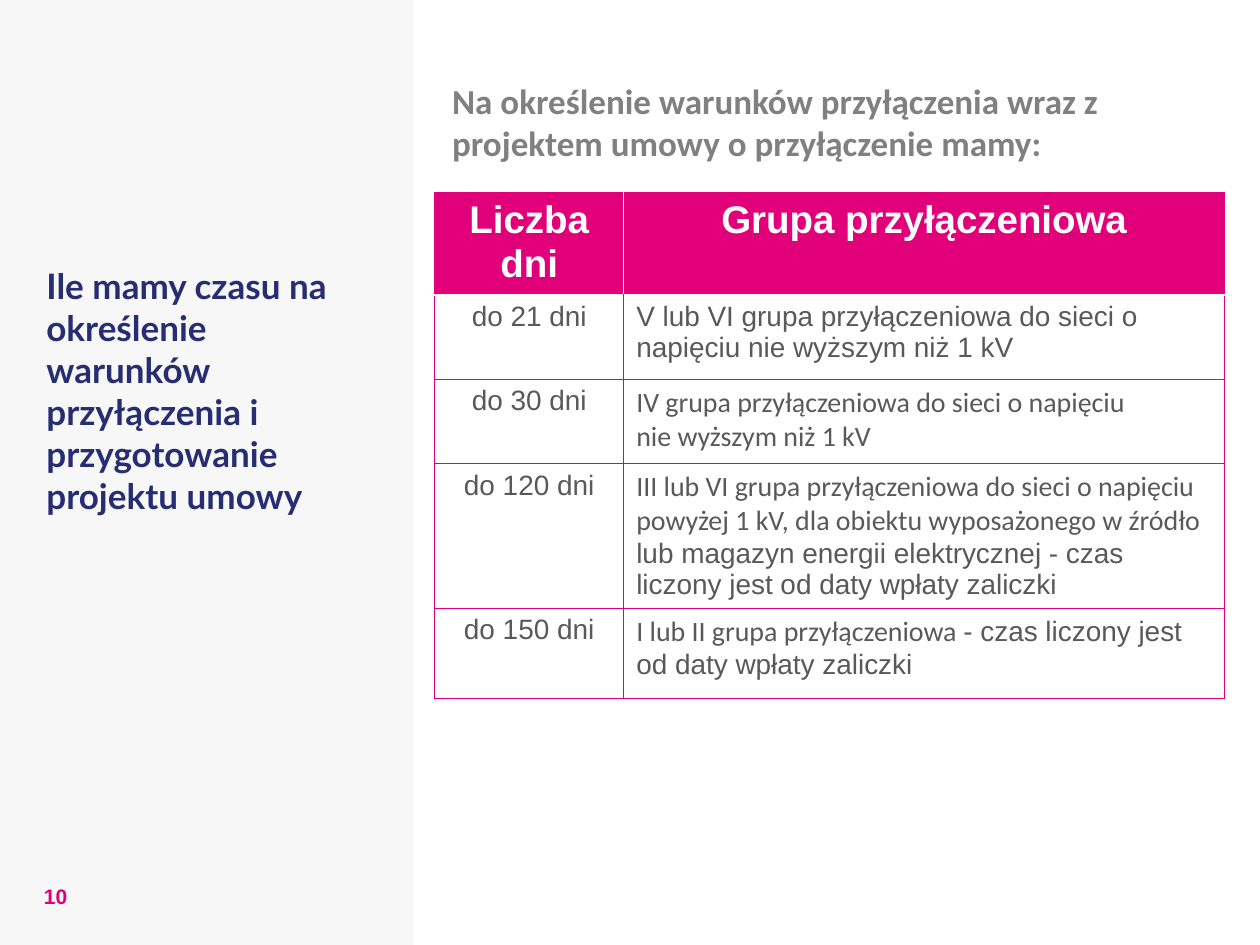
from lxml import etree
from pptx import Presentation
from pptx import util as u
from pptx.dml.color import RGBColor
from pptx.enum import shapes, text
from pptx.oxml.ns import qn

HUES = {"pink": "E2007A", "navy": "272D73", "grey": "808080",
        "body": "595959", "panel": "F7F7F7", "white": "FFFFFF"}
BOXES = [
    ("10", (0.25, 6.96, 0.42, 0.31), "Arial", 12, "pink"),
    ("Ile mamy czasu na określenie warunków przyłączenia i przygotowanie projektu umowy",
     (0.27, 2.05, 2.73, 2.34), "Lato", 20, "navy"),
    ("Na określenie warunków przyłączenia wraz z projektem umowy o przyłączenie mamy:",
     (3.49, 0.58, 6.19, 0.78), "Calibri", 20, "grey"),
]
HEAD = ["Liczba dni", "Grupa przyłączeniowa"]
ROWS = [
    ("do 21 dni", [("V lub VI grupa przyłączeniowa do sieci o napięciu nie wyższym niż 1 kV", "Arial")]),
    ("do 30 dni", [("IV grupa przyłączeniowa do sieci o napięciu\nnie wyższym niż 1 kV", "Calibri")]),
    ("do 120 dni", [
        ("III lub VI grupa przyłączeniowa do sieci o napięciu powyżej 1 kV, "
         "dla obiektu wyposażonego w źródło", "Calibri"),
        (" lub magazyn energii elektrycznej - czas liczony jest od daty wpłaty zaliczki", "Arial")]),
    ("do 150 dni", [
        ("I lub II grupa przyłączeniowa ", "Calibri"),
        ("- czas liczony jest od daty wpłaty zaliczki", "Arial")]),
]
WIDTHS = [1.5, 4.77]
HEIGHTS = [0.81, 0.67, 0.67, 1.15, 0.71]


def color(name):
    return RGBColor.from_string(HUES[name])


def add_run(para, words, face, size, hue, bold=False):
    for i, line in enumerate(words.split("\n")):
        if i:
            para.add_line_break()
        run = para.add_run()
        run.text = line
        font = run.font
        font.name, font.size, font.bold = face, u.Pt(size), bold
        font.color.rgb = color(hue)


def add_edge(cell, side, hue, width):
    props = cell._tc.get_or_add_tcPr()
    line = etree.SubElement(props, qn("a:ln" + side), w=str(u.Pt(width)))
    fill = etree.SubElement(line, qn("a:solidFill"))
    etree.SubElement(fill, qn("a:srgbClr"), val=HUES[hue])


def style_cell(cell, row, col):
    pink, white = ("pink", 0.5), ("white", 1)
    edges = {"L": pink, "R": pink, "T": pink, "B": pink}
    if row == 0:
        edges["B"] = white
        del edges["L" if col else "R"]
    elif row == 1:
        edges["T"] = white
    for side, (hue, width) in edges.items():
        add_edge(cell, side, hue, width)
    cell.fill.solid()
    cell.fill.fore_color.rgb = color("white" if row else "pink")


def add_grid(slide):
    frame = slide.shapes.add_table(
        len(HEIGHTS), len(WIDTHS), u.Inches(3.45), u.Inches(1.53),
        u.Inches(sum(WIDTHS)), u.Inches(sum(HEIGHTS)))
    grid = frame.table
    for col, width in zip(grid.columns, WIDTHS):
        col.width = u.Inches(width)
    for row, height in zip(grid.rows, HEIGHTS):
        row.height = u.Inches(height)
    data = [[[(words, "Arial")] for words in HEAD]]
    data += [[[(days, "Arial")], runs] for days, runs in ROWS]
    for r, line in enumerate(data):
        for c, runs in enumerate(line):
            cell = grid.cell(r, c)
            style_cell(cell, r, c)
            para = cell.text_frame.paragraphs[0]
            if r == 0 or c == 0:
                para.alignment = text.PP_ALIGN.CENTER
            size, hue = (16, "body") if r else (22, "white")
            for words, face in runs:
                add_run(para, words, face, size, hue, r == 0)


def main():
    deck = Presentation()
    deck.slide_width, deck.slide_height = u.Inches(10), u.Inches(7.5)
    slide = deck.slides.add_slide(deck.slide_layouts[6])
    panel = slide.shapes.add_shape(
        shapes.MSO_SHAPE.RECTANGLE, 0, 0, u.Inches(3.28), u.Inches(7.5))
    panel.shadow.inherit = False
    panel.fill.solid()
    panel.fill.fore_color.rgb = color("panel")
    panel.line.fill.background()
    add_grid(slide)
    for words, place, face, size, hue in BOXES:
        box = slide.shapes.add_textbox(*map(u.Inches, place))
        box.text_frame.word_wrap = True
        add_run(box.text_frame.paragraphs[0], words, face, size, hue, True)
    deck.save("out.pptx")


if __name__ == "__main__":
    main()
